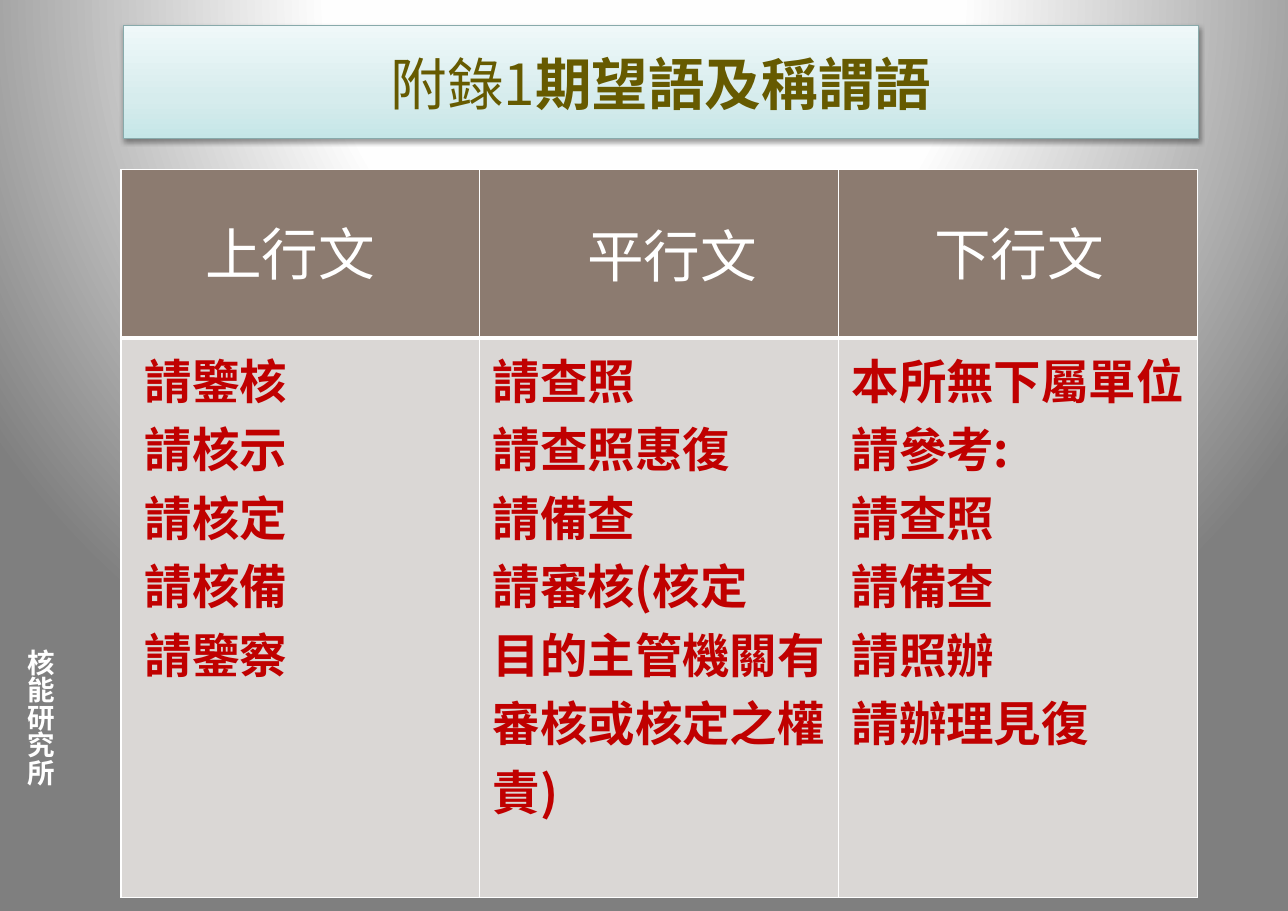
from pptx import Presentation
from pptx.dml.color import RGBColor
from pptx.enum import shapes, text
from pptx.oxml import parse_xml
from pptx.oxml.ns import nsdecls
from pptx.util import Pt

FONT = "Noto Sans CJK SC"
WHITE = RGBColor(0xFF, 0xFF, 0xFF)
NEAR_WHITE = RGBColor(0xFE, 0xFE, 0xFE)
GREY = RGBColor(0x7F, 0x7F, 0x7F)
OLIVE = RGBColor(0x66, 0x5A, 0x00)
RED = RGBColor(0xC0, 0x00, 0x00)
BROWN = RGBColor(0x8C, 0x7B, 0x70)
STONE = RGBColor(0xDA, 0xD7, 0xD5)
TEAL = RGBColor(0xC5, 0xE6, 0xE7)
PALE_TEAL = RGBColor(0xD6, 0xEC, 0xED)
ICE = RGBColor(0xEF, 0xF8, 0xF9)
TEAL_EDGE = RGBColor(0x88, 0xAA, 0xAB)

HEADINGS = [("上行文", 126, 139), ("平行文", 375.8, 140.4), ("下行文", 602.6, 139)]
PHRASES = [
    ["請鑒核", "請核示", "請核定", "請核備", "請鑒察"],
    ["請查照", "請查照惠復", "請備查", "請審核(核定",
     "目的主管機關有審核或核定之權責)"],
    ["本所無下屬單位", "請參考:", "請查照", "請備查", "請照辦", "請辦理見復"],
]


def add_run(p, content, size, color, bold=False):
    r = p.add_run()
    r.text = content
    r.font.size = Pt(size)
    r.font.bold = bold
    r.font.name = FONT
    r.font.color.rgb = color
    r._r.get_or_add_rPr().append(
        parse_xml(f'<a:ea {nsdecls("a")} typeface="{FONT}"/>'))


def gradient(stops, direction):
    marks = "".join(
        f'<a:gs pos="{pos * 1000}"><a:srgbClr val="{color}"/></a:gs>'
        for pos, color in stops)
    return (f'<a:gradFill {nsdecls("a")} rotWithShape="1">'
            f'<a:gsLst>{marks}</a:gsLst>{direction}</a:gradFill>')


def set_background(s):
    fill = gradient(
        [(0, WHITE), (40, NEAR_WHITE), (100, GREY)],
        '<a:path path="circle"><a:fillToRect l="50000" t="-80000" '
        'r="50000" b="180000"/></a:path>')
    s.element.cSld.insert(0, parse_xml(
        f'<p:bg {nsdecls("p", "a")}><p:bgPr>{fill}<a:effectLst/></p:bgPr></p:bg>'))


def set_insets(frame, left, top):
    frame.margin_left = frame.margin_right = Pt(left)
    frame.margin_top = frame.margin_bottom = Pt(top)


def add_title(s):
    sp = s.shapes.add_shape(shapes.MSO_SHAPE.RECTANGLE,
                            Pt(80.6), Pt(16.8), Pt(702.8), Pt(74))
    sp.shadow.inherit = False
    spPr = sp._element.spPr
    spPr.insert(2, parse_xml(gradient(
        [(0, TEAL), (35, PALE_TEAL), (100, ICE)],
        '<a:lin ang="16200000" scaled="0"/>')))
    sp.line.color.rgb = TEAL_EDGE
    sp.line.width = Pt(0.75)
    spPr[-1].append(parse_xml(
        f'<a:outerShdw {nsdecls("a")} blurRad="{Pt(3.1)}" dist="{Pt(1.6)}" '
        'dir="5400000" rotWithShape="0"><a:srgbClr val="000000">'
        '<a:alpha val="38000"/></a:srgbClr></a:outerShdw>'))
    tf = sp.text_frame
    tf.word_wrap = True
    tf.vertical_anchor = text.MSO_ANCHOR.MIDDLE
    set_insets(tf, 8, 4)
    p = tf.paragraphs[0]
    p.alignment = text.PP_ALIGN.CENTER
    add_run(p, "附錄1", 37, OLIVE)
    add_run(p, "期望語及稱謂語", 37, OLIVE, bold=True)


def add_label(s, content, left, top, width, height, size, bold=False, vertical=False):
    sp = s.shapes.add_textbox(Pt(left), Pt(top), Pt(width), Pt(height))
    tf = sp.text_frame
    tf.word_wrap = vertical
    tf.auto_size = text.MSO_AUTO_SIZE.SHAPE_TO_FIT_TEXT
    if vertical:
        tf._txBody.bodyPr.set("vert", "eaVert")
    else:
        set_insets(tf, 8, 4)
    add_run(tf.paragraphs[0], content, size, WHITE, bold)


def style_cell(cell, color, bottom=1):
    tcPr = cell._tc.get_or_add_tcPr()
    for side, width in (("L", 1), ("R", 1), ("T", 1), ("B", bottom)):
        tcPr.append(parse_xml(
            f'<a:ln{side} {nsdecls("a")} w="{Pt(width)}"><a:solidFill>'
            f'<a:srgbClr val="{WHITE}"/></a:solidFill></a:ln{side}>'))
    cell.fill.solid()
    cell.fill.fore_color.rgb = color


def add_phrase_table(s):
    table = s.shapes.add_table(2, 3, Pt(79), Pt(110.8), Pt(703.5), Pt(476)).table
    table.first_row = False
    table.horz_banding = False
    table.rows[0].height = Pt(110)
    table.rows[1].height = Pt(366)
    for col, phrases in enumerate(PHRASES):
        style_cell(table.cell(0, col), BROWN, bottom=3)
        cell = table.cell(1, col)
        style_cell(cell, STONE)
        set_insets(cell, 8.6, 4.3)
        if col == 0:
            cell.margin_left = Pt(15.6)
        tf = cell.text_frame
        for i, phrase in enumerate(phrases):
            p = tf.add_paragraph() if i else tf.paragraphs[0]
            add_run(p, phrase, 31, RED, bold=True)


def main():
    prs = Presentation()
    prs.slide_width, prs.slide_height = Pt(841.7), Pt(595.4)
    s = prs.slides.add_slide(prs.slide_layouts[6])
    set_background(s)
    add_label(s, "核能研究所", 5, 417, 36, 119, 18, bold=True, vertical=True)
    add_title(s)
    add_phrase_table(s)
    for heading, left, top in HEADINGS:
        add_label(s, heading, left, top, 129, 53, 37)
    prs.save("out.pptx")


if __name__ == "__main__":
    main()
